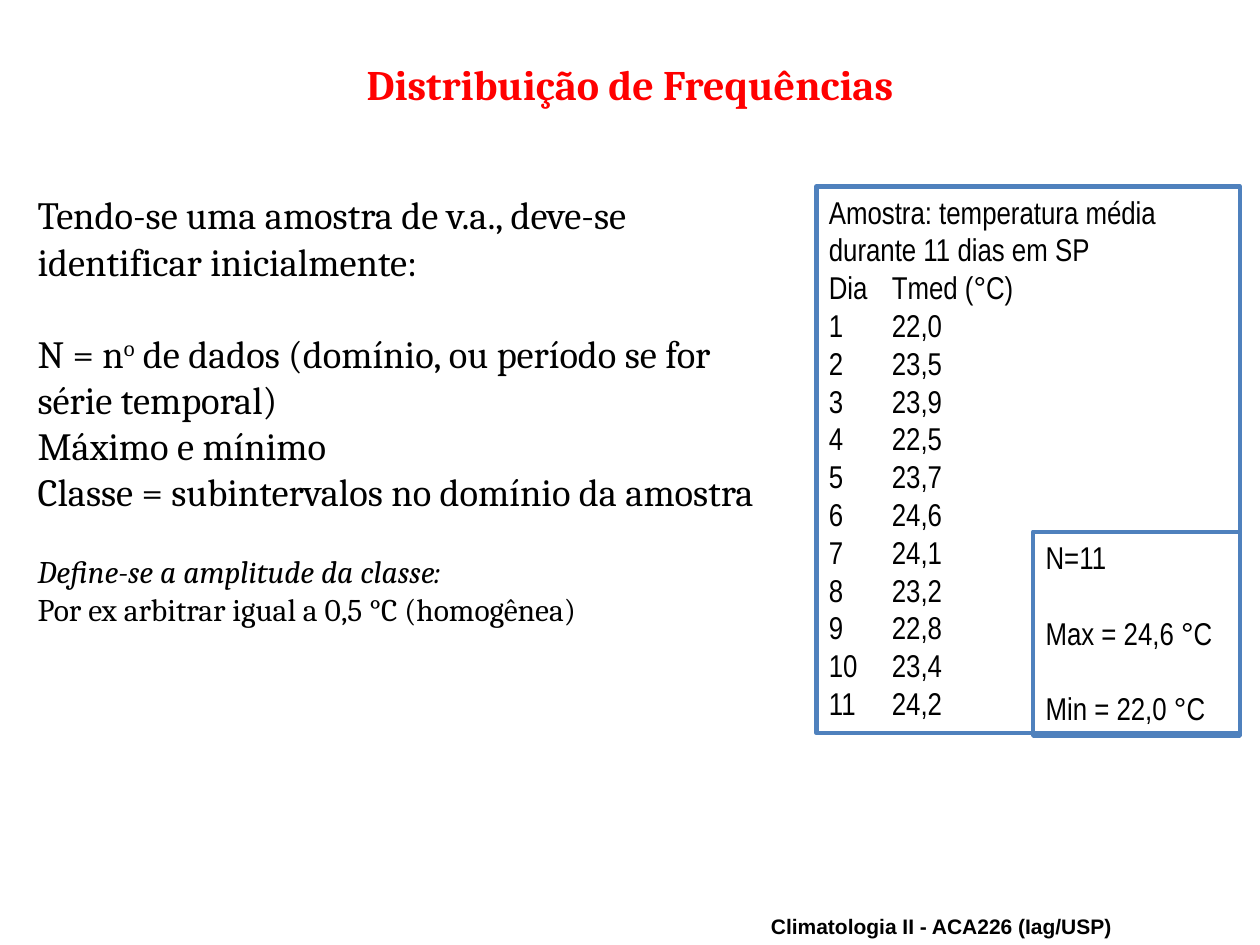
from dataclasses import dataclass

from pptx import Presentation
from pptx.dml.color import RGBColor
from pptx.enum.text import MSO_ANCHOR, PP_ALIGN
from pptx.shapes.autoshape import Shape
from pptx.slide import Slide
from pptx.util import Pt


@dataclass(frozen=True)
class Span:
    text: str
    italic: bool = False
    superscript: bool = False


@dataclass(frozen=True)
class Line:
    spans: tuple[Span, ...]
    size: float
    space_before: float = 0


@dataclass(frozen=True)
class Block:
    left: float
    top: float
    width: float
    height: float
    font: str
    lines: tuple[Line, ...]
    color: str = "000000"
    bold: bool = False
    border: str = ""
    align: PP_ALIGN = PP_ALIGN.LEFT
    anchor: MSO_ANCHOR = MSO_ANCHOR.TOP


def rgb(value: str) -> RGBColor:
    """Turn a hex string into a colour."""
    return RGBColor.from_string(value)


def plain(text: str, size: float, space_before: float = 0, italic: bool = False) -> Line:
    """Make a line holding a single span."""
    return Line((Span(text, italic),), size, space_before)


def write_lines(shape: Shape, block: Block) -> None:
    """Write the lines of a block, run by run."""
    frame = shape.text_frame
    frame.word_wrap = True
    frame.vertical_anchor = block.anchor
    for index, line in enumerate(block.lines):
        paragraph = frame.add_paragraph() if index else frame.paragraphs[0]
        paragraph.alignment = block.align
        if line.space_before:
            paragraph.space_before = Pt(line.space_before)
        for span in line.spans:
            run = paragraph.add_run()
            run.text = span.text
            run.font.name = block.font
            run.font.size = Pt(line.size)
            run.font.bold = block.bold
            run.font.italic = span.italic
            run.font.color.rgb = rgb(block.color)
            if span.superscript:
                run.font._element.set("baseline", "30000")


def draw_block(slide: Slide, block: Block) -> None:
    """Draw a text block, with a frame when it has a border colour."""
    shape = slide.shapes.add_textbox(
        Pt(block.left), Pt(block.top), Pt(block.width), Pt(block.height)
    )
    if block.border:
        shape.line.color.rgb = rgb(block.border)
        shape.line.width = Pt(2.5)
    write_lines(shape, block)


TEMPERATURES = ("22,0", "23,5", "23,9", "22,5", "23,7", "24,6",
                "24,1", "23,2", "22,8", "23,4", "24,2")
FRAME_COLOR = "4F81BD"
BODY, DETAIL = 22, 18
BODY_GAP, DETAIL_GAP = 26.4, 21.6

title = Block(36, 21.6, 648, 51.84, "Cambria",
              (plain("Distribuição de Frequências", 24),), "FF0000", bold=True,
              align=PP_ALIGN.CENTER, anchor=MSO_ANCHOR.MIDDLE)
sample = Block(466.56, 106.56, 241.92, 312.48, "Arial Narrow", (
    plain("Amostra: temperatura média durante 11 dias em SP", DETAIL),
    plain("Dia\tTmed (°C)", DETAIL),
    *(plain(f"{day}\t{value}", DETAIL) for day, value in enumerate(TEMPERATURES, 1)),
), border=FRAME_COLOR)
summary = Block(590.4, 303.84, 118.08, 116.64, "Arial Narrow", (
    plain("N=11", DETAIL),
    plain("Max = 24,6 °C", DETAIL, DETAIL_GAP),
    plain("Min = 22,0 °C", DETAIL, DETAIL_GAP),
), border=FRAME_COLOR)
definitions = Block(14.4, 105.84, 433.44, 312.48, "Cambria", (
    plain("Tendo-se uma amostra de v.a., deve-se identificar inicialmente:", BODY),
    Line((Span("N = n"), Span("o", superscript=True),
          Span(" de dados (domínio, ou período se for série temporal)")), BODY, BODY_GAP),
    plain("Máximo e mínimo", BODY),
    plain("Classe = subintervalos no domínio da amostra", BODY),
    plain("Define-se a amplitude da classe:", DETAIL, DETAIL_GAP, italic=True),
    plain("Por ex arbitrar igual a 0,5 °C (homogênea)", DETAIL),
))
course = Block(433.44, 518.4, 286.56, 21.6, "Arial",
               (plain("Climatologia II - ACA226 (Iag/USP)", 12),), bold=True)


def main() -> None:
    """Build the slide and save it."""
    presentation = Presentation()
    presentation.slide_width, presentation.slide_height = Pt(720), Pt(540)
    slide = presentation.slides.add_slide(presentation.slide_layouts[6])
    for block in (title, sample, summary, definitions, course):
        draw_block(slide, block)
    presentation.save("out.pptx")


if __name__ == "__main__":
    main()
